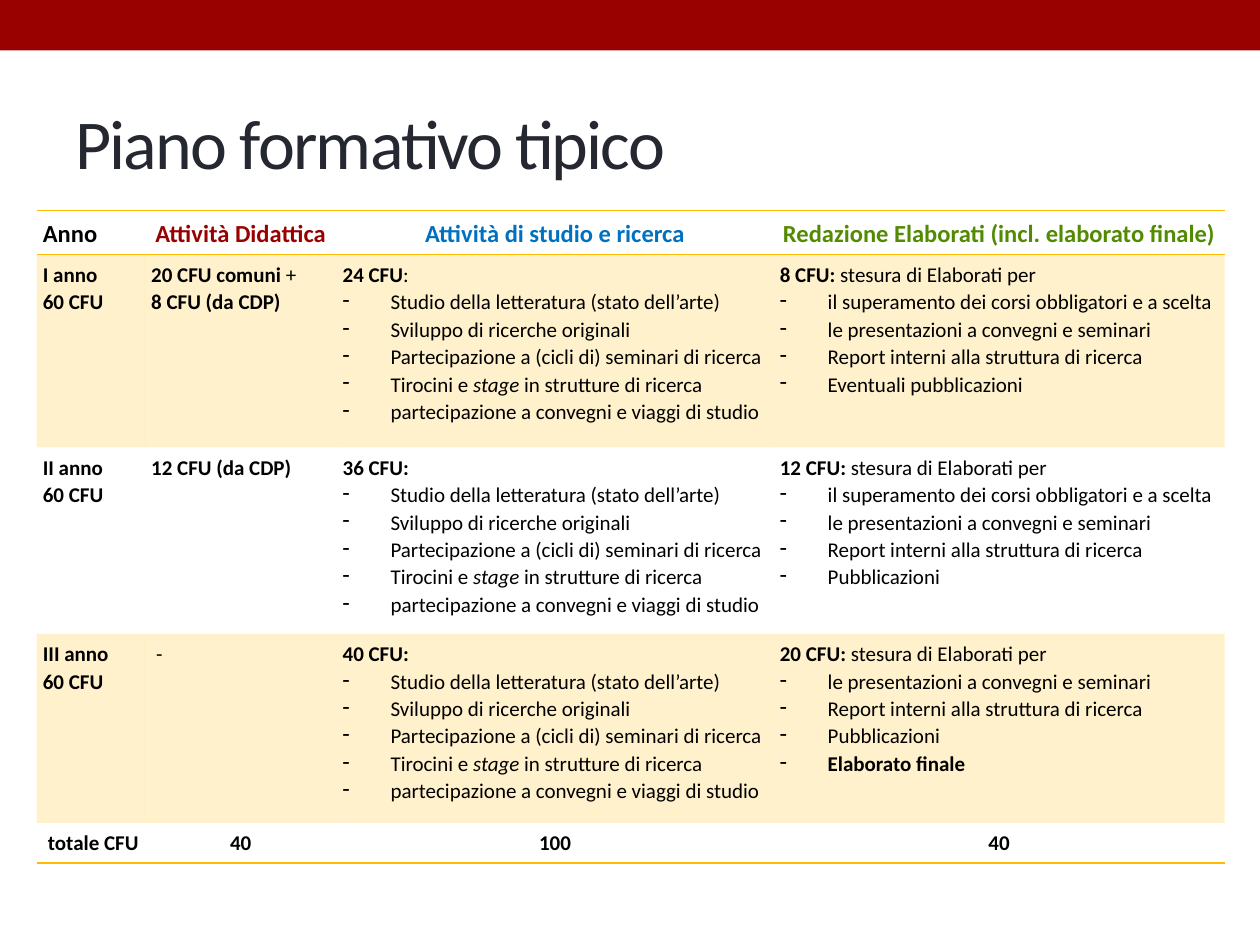
from lxml.etree import SubElement
from pptx import Presentation
from pptx.dml.color import RGBColor
from pptx.enum.shapes import MSO_SHAPE as Shape
from pptx.enum.text import MSO_ANCHOR as Anchor, PP_ALIGN as Align
from pptx.oxml import parse_xml
from pptx.oxml.ns import nsdecls, qn
from pptx.util import Inches, Pt

FONT = "Calibri"
GOLD = "FFBA00"
PAD = 0.05
PLAIN = "{2D5ABB26-0587-4C30-8999-92F81FD0307C}"  # no style, no grid
COLS = [0.86, 1.52, 3.47, 3.58]
ROWS = [0.35, 1.53, 1.48, 1.5, 0.32]

HEAD = [
    ("Anno", "000000", Align.LEFT),
    ("Attività Didattica", "990000", Align.CENTER),
    ("Attività di studio e ricerca", "0070C0", Align.CENTER),
    ("Redazione Elaborati (incl. elaborato finale)", "528A02", Align.CENTER),
]
STUDY = [
    "- Studio della letteratura (stato dell’arte)",
    "- Sviluppo di ricerche originali",
    "- Partecipazione a (cicli di) seminari di ricerca",
    "- Tirocini e _stage _in strutture di ricerca",
    "- partecipazione a convegni e viaggi di studio",
]
EXAMS = "- il superamento dei corsi obbligatori e a scelta"
TALKS = [
    "- le presentazioni a convegni e seminari",
    "- Report interni alla struttura di ricerca",
]
DRAFT = "stesura di Elaborati per"
# *bold*, _italic_, "- " opens a list item
YEARS = [
    (["*I anno*", "*60 CFU*"],
     ["*20 CFU comuni *+", "*8 CFU (da CDP)*"],
     ["*24 CFU*:", *STUDY],
     [f"*8 CFU: *{DRAFT}", EXAMS, *TALKS, "- Eventuali pubblicazioni"]),
    (["*II anno*", "*60 CFU*"],
     ["*12 CFU (da CDP)*"],
     ["*36 CFU:*", *STUDY],
     [f"*12 CFU: *{DRAFT}", EXAMS, *TALKS, "- Pubblicazioni"]),
    (["*III anno*", "*60 CFU*"],
     ["-"],
     ["*40 CFU:*", *STUDY],
     [f"*20 CFU: *{DRAFT}", *TALKS, "- Pubblicazioni", "- *Elaborato finale*"]),
]
TOTAL = ["totale CFU", "40", "100", "40"]


def color(code):
    return RGBColor.from_string(code)


def style(font, size, code):
    font.name, font.size = FONT, Pt(size)
    font.color.rgb = color(code)


def add_bar(slide, wide, high):
    bar = slide.shapes.add_shape(Shape.RECTANGLE, 0, 0, wide, high)
    bar.shadow.inherit = False
    bar.fill.solid()
    bar.fill.fore_color.rgb = color("990000")
    bar.line.fill.background()


def add_title(slide, text):
    box = slide.shapes.add_textbox(Inches(0.5), Inches(0.58), Inches(9), Inches(1.08))
    frame = box.text_frame
    frame.word_wrap = True
    frame.vertical_anchor = Anchor.MIDDLE
    para = frame.paragraphs[0]
    run = para.add_run()
    run.text = text
    style(para.font, 40, "252731")
    run.font._element.set("spc", "-100")


def add_dash(para):
    """Make the paragraph a list item with a hanging dash."""
    props = para._p.get_or_add_pPr()
    props.set("marL", str(Inches(0.38)))
    props.set("indent", str(-Inches(0.38)))
    SubElement(props, qn("a:buChar")).set("char", "-")


def split(line):
    """Return (text, bold, italic) for each marked part of a line."""
    return [(text, i % 2 == 1, j % 2 == 1)
            for i, part in enumerate(line.split("*"))
            for j, text in enumerate(part.split("_")) if text]


def write(cell, lines, size=12, code="000000", align=Align.LEFT):
    frame = cell.text_frame
    for n, line in enumerate(lines):
        para = frame.add_paragraph() if n else frame.paragraphs[0]
        para.line_spacing = 1.07
        para.alignment = align
        if line.startswith("- "):
            add_dash(para)
            line = line[2:]
        style(para.font, size, code)
        parts = split(line)
        for text, bold, slant in parts:
            run = para.add_run()
            run.text = text
            font = run.font if len(parts) > 1 else para.font
            font.bold, font.italic = bold, slant


def rule(cell, *sides):
    """Draw gold borders on the given sides, in schema order."""
    for side in reversed(sides):
        line = parse_xml(
            f'<a:ln{side} {nsdecls("a")} w="12700"><a:solidFill>'
            f'<a:srgbClr val="{GOLD}"/></a:solidFill></a:ln{side}>')
        cell._tc.get_or_add_tcPr().insert(0, line)


def tint(cell):
    cell.fill.solid()
    cell.fill.fore_color.rgb = color(GOLD)
    shade = cell._tc.tcPr.find(".//" + qn("a:srgbClr"))
    SubElement(shade, qn("a:alpha")).set("val", "20000")


def add_grid(slide):
    frame = slide.shapes.add_table(
        len(ROWS), len(COLS), Inches(0.29), Inches(1.67),
        Inches(sum(COLS)), Inches(sum(ROWS)))
    table = frame.table
    table.first_row = table.horz_banding = False
    table._tbl.tblPr.find(qn("a:tableStyleId")).text = PLAIN
    for col, wide in zip(table.columns, COLS):
        col.width = Inches(wide)
    for row, high in zip(table.rows, ROWS):
        row.height = Inches(high)
    for cell in table.iter_cells():
        cell.margin_left = cell.margin_right = Inches(PAD)
        cell.margin_top = cell.margin_bottom = Inches(PAD)
        cell.fill.background()
    return table


def fill_grid(table):
    last = len(ROWS) - 1
    for c, (text, code, align) in enumerate(HEAD):
        cell = table.cell(0, c)
        cell.vertical_anchor = Anchor.MIDDLE
        write(cell, [f"*{text}*"], 14, code, align)
        rule(cell, "T", "B")
    for r, year in enumerate(YEARS, 1):
        for c, lines in enumerate(year):
            cell = table.cell(r, c)
            write(cell, lines)
            if r % 2:
                tint(cell)
    table.cell(3, 1).margin_left = Inches(PAD + 0.04)
    for c, text in enumerate(TOTAL):
        cell = table.cell(last, c)
        write(cell, [f"*{text}*"], align=Align.CENTER if c else Align.RIGHT)
        rule(cell, "B")


def main():
    deck = Presentation()
    deck.slide_width, deck.slide_height = Inches(10), Inches(7.5)
    slide = deck.slides.add_slide(deck.slide_layouts[6])
    add_bar(slide, deck.slide_width, Inches(0.4))
    add_title(slide, "Piano formativo tipico")
    fill_grid(add_grid(slide))
    deck.save("out.pptx")


if __name__ == "__main__":
    main()
